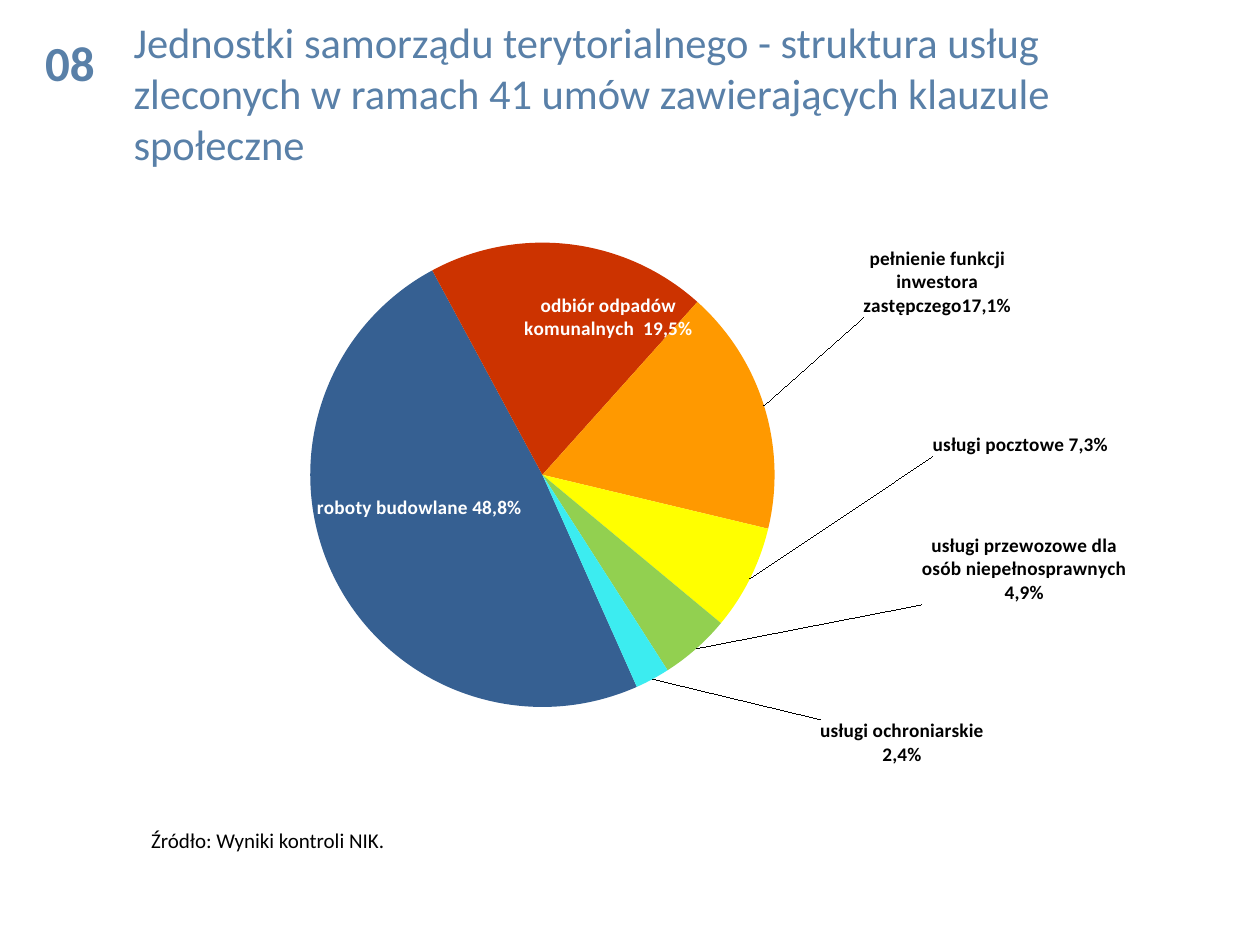
from dataclasses import dataclass
from math import cos, pi, sin

from lxml.etree import SubElement
from pptx import Presentation
from pptx.chart.data import CategoryChartData
from pptx.dml.color import RGBColor
from pptx.enum.chart import XL_CHART_TYPE as ChartType, XL_LABEL_POSITION as LabelPos
from pptx.enum.text import MSO_ANCHOR as Anchor, MSO_AUTO_SIZE as AutoSize, PP_ALIGN as Align
from pptx.oxml import parse_xml
from pptx.oxml.ns import nsdecls, qn
from pptx.util import Inches, Pt


@dataclass(frozen=True)
class Theme:
    font: str = "Calibri"
    accent: str = "5980A8"
    dark: str = "000000"
    light: str = "FFFFFF"
    title_size: float = 24.3
    number_size: float = 28
    source_size: float = 12
    label_size: float = 11
    chart_size: float = 10


@dataclass(frozen=True)
class Slice:
    category: str
    share: float
    fill: str
    label: str
    center: tuple  # label centre on the slide, inches
    label_color: str = Theme.dark


SLICES = [
    Slice("roboty budowlane", 0.488, "366092",
          "roboty budowlane 48,8%", (3.33, 4.03), Theme.light),
    Slice("odbiór odpadów komunalnych", 0.195, "CC3300",
          "odbiór odpadów\nkomunalnych  19,5%", (4.83, 2.52), Theme.light),
    Slice("pełnienie funkcji inwestora zastępczego", 0.171, "FF9900",
          "pełnienie funkcji\ninwestora\nzastępczego17,1%", (7.44, 2.24)),
    Slice("usługi pocztowe", 0.073, "FFFF00",
          "usługi pocztowe 7,3%", (8.1, 3.53)),
    Slice("usługi przewozowe dla osób niepełnosprawnych", 0.049, "92D050",
          "usługi przewozowe dla\nosób niepełnosprawnych\n4,9%", (8.13, 4.52)),
    Slice("usługi ochroniarskie", 0.024, "3CECF0",
          "usługi ochroniarskie\n2,4%", (7.16, 5.9)),
]
CHART_BOX = (1.07, 1.28, 8.19, 5.24)
PLOT = (0.17, 0.12, 0.45, 0.71)  # fractions of the chart box
START_ANGLE = 156


def manual_layout(**values):
    """Chart layout element holding the given values in order."""
    layout = parse_xml(f"<c:layout {nsdecls('c')}><c:manualLayout/></c:layout>")
    for tag, value in values.items():
        SubElement(layout[0], qn(f"c:{tag}")).set("val", str(value))
    return layout


def label_offsets(slices):
    """Shift of each label from the middle of its slice, as chart fractions."""
    left, top, width, height = CHART_BOX
    x, y, w, h = PLOT
    middle_x, middle_y = left + (x + w / 2) * width, top + (y + h / 2) * height
    half_radius = min(w * width, h * height) / 4
    total, passed = sum(part.share for part in slices), 0
    for part in slices:
        angle = START_ANGLE * pi / 180 + 2 * pi * (passed + part.share / 2) / total
        passed += part.share
        yield (round((part.center[0] - middle_x - half_radius * sin(angle)) / width, 4),
               round((part.center[1] - middle_y + half_radius * cos(angle)) / height, 4))


class Deck:
    def __init__(self, theme):
        self.theme = theme
        self.deck = Presentation()
        self.deck.slide_width, self.deck.slide_height = Inches(10), Inches(7.5)
        self.slide = self.deck.slides.add_slide(self.deck.slide_layouts[5])

    def style(self, font, size, color, bold=False):
        formats = {"name": self.theme.font, "size": Pt(size), "bold": bold}
        for name, value in formats.items():
            setattr(font, name, value)
        font.color.rgb = RGBColor.from_string(color)

    def title(self, text, box):
        heading = self.slide.shapes.title
        for name, value in zip(("left", "top", "width", "height"), box):
            setattr(heading, name, Inches(value))
        frame = heading.text_frame
        frame.text = text
        formats = {"word_wrap": True, "auto_size": AutoSize.NONE,
                   "vertical_anchor": Anchor.MIDDLE, "margin_bottom": Inches(0.42)}
        for name, value in formats.items():
            setattr(frame, name, value)
        frame.paragraphs[0].alignment = Align.LEFT
        self.style(frame.paragraphs[0].font, self.theme.title_size, self.theme.accent)

    def text(self, text, box, size, color, bold=False, align=Align.LEFT):
        frame = self.slide.shapes.add_textbox(*map(Inches, box)).text_frame
        frame.text = text
        frame.word_wrap = True
        frame.auto_size = AutoSize.SHAPE_TO_FIT_TEXT
        frame.paragraphs[0].alignment = align
        self.style(frame.paragraphs[0].font, size, color, bold)

    def pie(self, name, slices, box):
        data = CategoryChartData(number_format="0.0%")
        data.categories = [part.category for part in slices]
        data.add_series(name, [part.share for part in slices])
        chart = self.slide.shapes.add_chart(ChartType.PIE, *map(Inches, box), data).chart
        chart.has_legend = chart.has_title = False
        self.style(chart.font, self.theme.chart_size, self.theme.dark)
        plot = chart.plots[0]
        plot.vary_by_categories = True
        shares = plot.series[0]

        # Slices and their labels
        for index, part in enumerate(slices):
            point = shares.points[index]
            point.format.fill.solid()
            point.format.fill.fore_color.rgb = RGBColor.from_string(part.fill)
            point.format.line.fill.background()
            frame = point.data_label.text_frame
            frame.text = part.label
            frame.word_wrap = False
            for line in frame.paragraphs:
                for run in line.runs:
                    self.style(run.font, self.theme.label_size, part.label_color, True)
            point.data_label.position = LabelPos.CENTER

        labels = shares.data_labels
        self.style(labels.font, self.theme.label_size, self.theme.dark, True)
        labels.number_format, labels.number_format_is_linked = "0.0%", False
        labels.show_value = labels.show_category_name = True

        # Label places, plot area and rotation
        chart_xml = chart.element
        for label, (x, y) in zip(chart_xml.iter(qn("c:dLbl")), label_offsets(slices)):
            label.insert(1, manual_layout(x=x, y=y))
        area = chart_xml.find(".//" + qn("c:plotArea"))
        for old in area.findall(qn("c:layout")):
            area.remove(old)
        x, y, w, h = PLOT
        area.insert(0, manual_layout(layoutTarget="inner", xMode="edge", yMode="edge",
                                     x=x, y=y, w=w, h=h))
        pie = area.find(qn("c:pieChart"))
        for old in pie.findall(qn("c:firstSliceAng")):
            pie.remove(old)
        SubElement(pie, qn("c:firstSliceAng")).set("val", str(START_ANGLE))


def main():
    theme = Theme()
    page = Deck(theme)
    page.title("Jednostki samorządu terytorialnego - struktura usług zleconych "
               "w ramach 41 umów zawierających klauzule społeczne", (0.96, 0.21, 8.37, 1.42))
    page.pie("struktura usług", SLICES, CHART_BOX)
    # Section number and source
    page.text("08", (0.2, 0.21, 0.71, 0.57), theme.number_size, theme.accent, True, Align.CENTER)
    page.text("Źródło: Wyniki kontroli NIK.", (1.1, 6.52, 3.62, 0.3),
              theme.source_size, theme.dark)
    page.deck.save("out.pptx")


if __name__ == "__main__":
    main()
